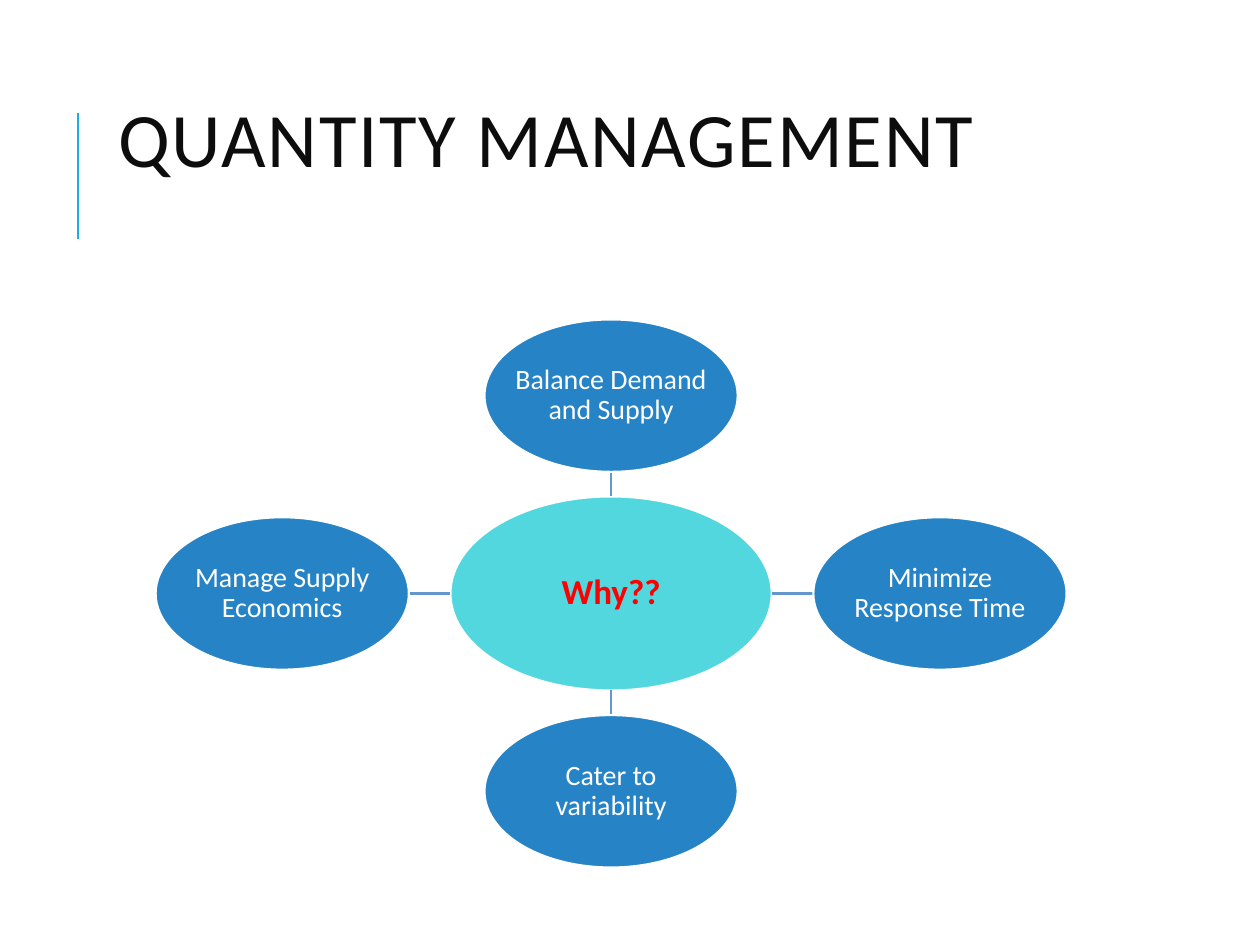
"""Build the Quantity Management slide: a hub with four reasons around it."""
from lxml import etree
from pptx import Presentation
from pptx.dml.color import RGBColor
from pptx.enum import shapes, text
from pptx.oxml.ns import qn
from pptx.util import Inches, Pt

TITLE = "QUANTITY MANAGEMENT"
HUB = "Why??"
REASONS = [
    ("Balance Demand\vand Supply", 0, -1),
    ("Minimize\vResponse Time", 1, 0),
    ("Cater to\vvariability", 0, 1),
    ("Manage Supply\vEconomics", -1, 0),
]
COLORS = {"title": "0D0D0D", "accent": "1CADE4", "hub": "27CED7", "hub_text": "FF0000",
          "reason": "2683C6", "spoke": "6296CD", "white": "FFFFFF"}
FONT = "Calibri"
CENTER_X, CENTER_Y = 4.85, 4.71
REACH_X, REACH_Y = 2.61, 1.57
HUB_SIZE = (2.55, 1.54)
REASON_SIZE = (2.01, 1.21)


def color(name):
    return RGBColor.from_string(COLORS[name])


def add_line(page, start, end, name, width):
    line = page.shapes.add_connector(shapes.MSO_CONNECTOR.STRAIGHT,
                                     *(Inches(value) for value in (*start, *end)))
    line.line.color.rgb = color(name)
    line.line.width = Pt(width)
    etree.SubElement(line._element.spPr, qn("a:effectLst"))


def add_oval(page, x, y, size, label, fill, font_color, points, bold=False):
    width, height = size
    oval = page.shapes.add_shape(shapes.MSO_SHAPE.OVAL, Inches(x - width / 2),
                                 Inches(y - height / 2), Inches(width), Inches(height))
    oval.shadow.inherit = False
    oval.fill.solid()
    oval.fill.fore_color.rgb = color(fill)
    oval.line.color.rgb = color("white")
    oval.line.width = Pt(1.25)
    frame = oval.text_frame
    frame.word_wrap = False
    frame.vertical_anchor = text.MSO_ANCHOR.MIDDLE
    frame.margin_left = frame.margin_right = frame.margin_top = frame.margin_bottom = 0
    para = frame.paragraphs[0]
    para.text = label
    para.alignment = text.PP_ALIGN.CENTER
    para.line_spacing = 0.9
    para.font.name, para.font.size, para.font.bold = FONT, Pt(points), bold
    para.font.color.rgb = color(font_color)
    return oval


def add_title(page):
    title = page.shapes.title
    title.left, title.top, title.width, title.height = map(Inches, (0.84, 0.64, 7.97, 1.64))
    frame = title.text_frame
    frame.word_wrap = True
    frame.vertical_anchor = text.MSO_ANCHOR.TOP
    frame.margin_top = Inches(0.22)
    para = frame.paragraphs[0]
    para.text = TITLE
    para.alignment = text.PP_ALIGN.LEFT
    para.line_spacing = 0.8
    para.font.name, para.font.size = FONT, Pt(44)
    para.font.color.rgb = color("title")
    para.runs[0].font._element.set("spc", "100")


def main():
    deck = Presentation()
    deck.slide_width, deck.slide_height = Inches(10), Inches(7.5)
    page = deck.slides.add_slide(deck.slide_layouts[5])
    add_title(page)
    add_line(page, (0.62, 1.9), (0.62, 0.9), "accent", 1.5)

    hub = add_oval(page, CENTER_X, CENTER_Y, HUB_SIZE, HUB, "hub", "hub_text", 20, True)
    hub_color = hub._element.spPr.find(qn("a:solidFill"))[0]
    etree.SubElement(hub_color, qn("a:alpha"), val="80000")

    for label, across, down in REASONS:
        x, y = CENTER_X + across * REACH_X, CENTER_Y + down * REACH_Y
        start = (CENTER_X + across * HUB_SIZE[0] / 2, CENTER_Y + down * HUB_SIZE[1] / 2)
        end = (x - across * REASON_SIZE[0] / 2, y - down * REASON_SIZE[1] / 2)
        add_line(page, start, end, "spoke", 1.25)
        add_oval(page, x, y, REASON_SIZE, label, "reason", "white", 16)

    deck.save("out.pptx")


if __name__ == "__main__":
    main()
